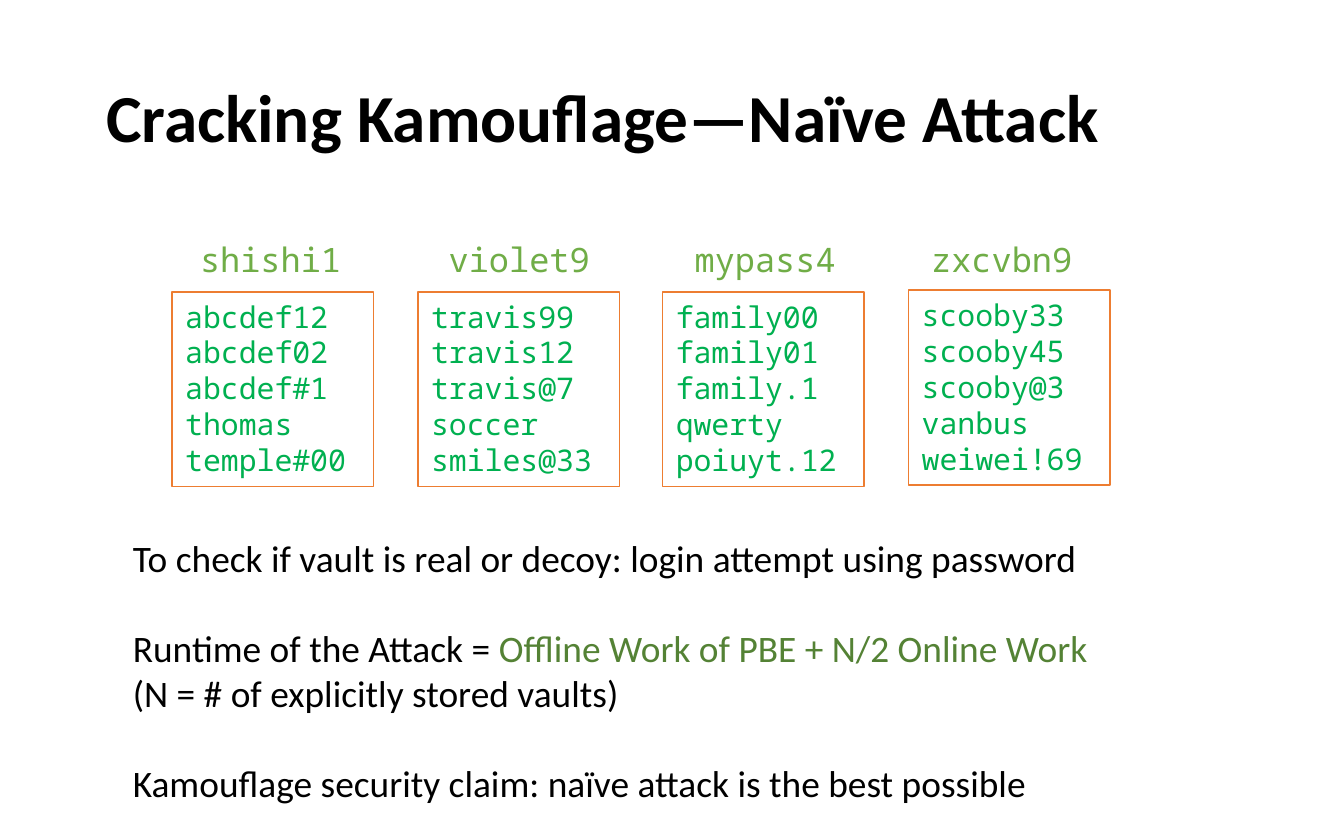
from pptx import Presentation
from pptx.dml.color import RGBColor
from pptx.enum.shapes import MSO_SHAPE
from pptx.enum.text import MSO_ANCHOR, PP_ALIGN
from pptx.util import Pt

PX = 9144  # EMU per px, 100 px to the inch
COLORS = {"text": "000000", "box": "FFFFFF", "border": "ED7D31",
          "decoy": "00B050", "master": "70AD47", "runtime": "548235"}
MONO, SANS = "Noto Sans Mono", "Calibri"

VAULTS = [  # label left, box top, master password, vault lines
    (139, 217, "shishi1", ["abcdef12", "abcdef02", "abcdef#1", "thomas", "temple#00"]),
    (324, 217, "violet9", ["travis99", "travis12", "travis@7", "soccer smiles@33"]),
    (507, 217, "mypass4", ["family00", "family01", "family.1", "qwerty poiuyt.12"]),
    (683, 216, "zxcvbn9", ["scooby33", "scooby45", "scooby@3", "vanbus weiwei!69"]),
]
NOTES = [  # space before in points, runs
    (0, [("To check if vault is real or decoy: login attempt using password", "text")]),
    (24.4, [("Runtime of the Attack = ", "text"),
            ("Offline Work of PBE + N/2 Online Work", "runtime")]),
    (0, [("(N = # of explicitly stored vaults)", "text")]),
    (24.4, [("Kamouflage security claim: naïve attack is the best possible", "text")]),
]


def px(*lengths):
    return [round(n) * PX for n in lengths]


def add_run(p, text, color, **font):
    r = p.add_run()
    r.text = text
    r.font.color.rgb = RGBColor.from_string(COLORS[color])
    for name, value in font.items():
        setattr(r.font, name, value)


prs = Presentation()
prs.slide_width, prs.slide_height = px(1000, 625)
s = prs.slides.add_slide(prs.slide_layouts[5])

title = s.shapes.title
title.left, title.top, title.width, title.height = px(69, 29, 862, 121)
tf = title.text_frame
tf.vertical_anchor = MSO_ANCHOR.MIDDLE
p = tf.paragraphs[0]
p.alignment, p.line_spacing = PP_ALIGN.LEFT, 0.9
add_run(p, "Cracking Kamouflage—Naïve Attack", "text", name=SANS, size=Pt(36), bold=True)

for i, (label_left, top, master, lines) in enumerate(VAULTS):
    sp = s.shapes.add_shape(MSO_SHAPE.RECTANGLE, *px(128 + i * 548 / 3, top, 150, 145))
    sp.shadow.inherit = False
    sp.fill.solid()
    sp.fill.fore_color.rgb = RGBColor.from_string(COLORS["box"])
    sp.line.color.rgb = RGBColor.from_string(COLORS["border"])
    sp.line.width = Pt(1)
    tf = sp.text_frame
    tf.word_wrap, tf.vertical_anchor = True, MSO_ANCHOR.TOP
    for j, line in enumerate(lines):
        p = tf.add_paragraph() if j else tf.paragraphs[0]
        p.alignment = PP_ALIGN.LEFT
        add_run(p, line, "decoy", name=MONO, size=Pt(16))

    tf = s.shapes.add_textbox(*px(label_left, 173, 126, 40)).text_frame
    tf.word_wrap = False
    add_run(tf.paragraphs[0], master, "master", name=MONO, size=Pt(18))

tf = s.shapes.add_textbox(*px(89, 393, 776, 212)).text_frame
tf.word_wrap = True
for i, (space, runs) in enumerate(NOTES):
    p = tf.add_paragraph() if i else tf.paragraphs[0]
    p.space_before = Pt(space)
    for text, color in runs:
        add_run(p, text, color, name=SANS, size=Pt(20))

prs.save("out.pptx")
